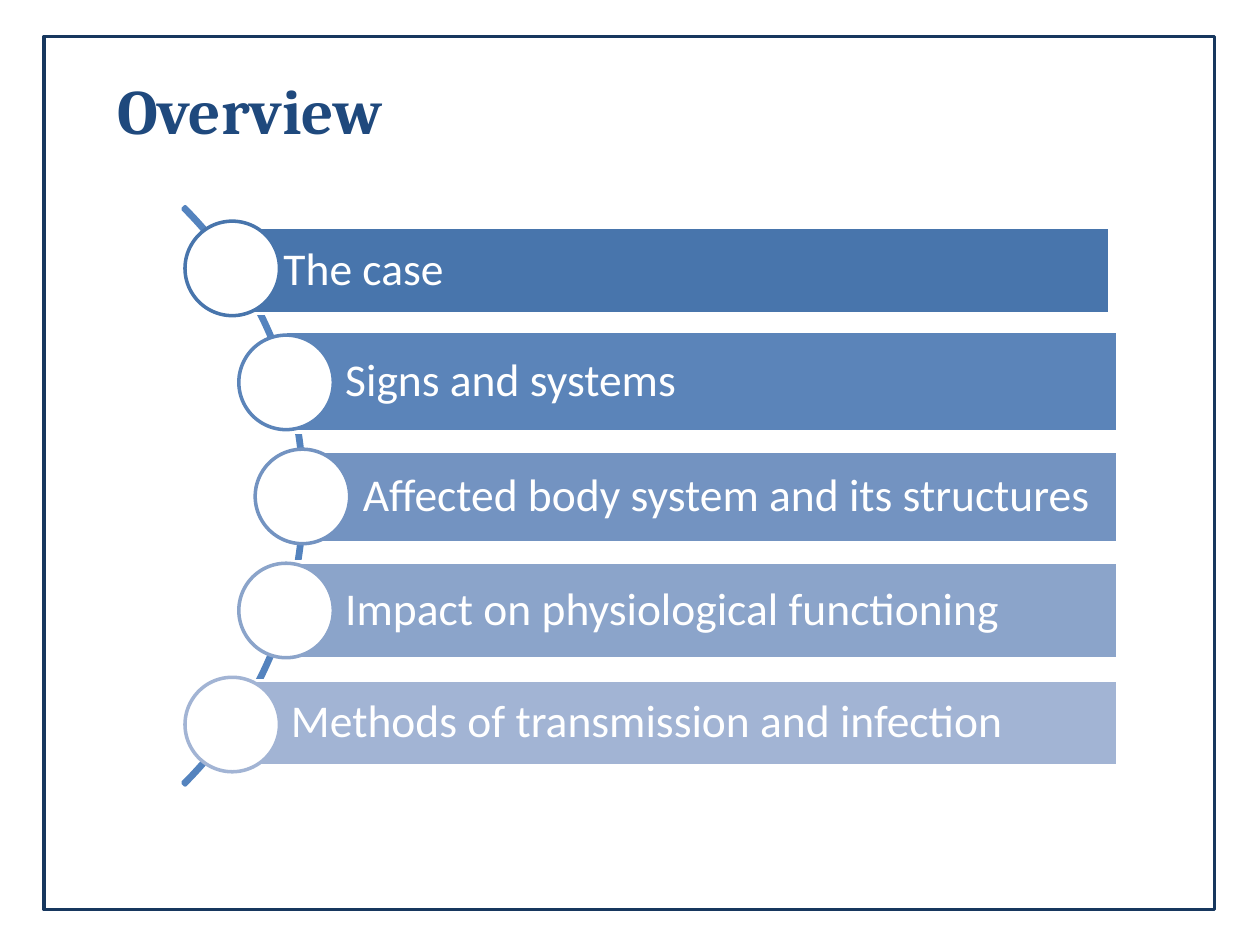
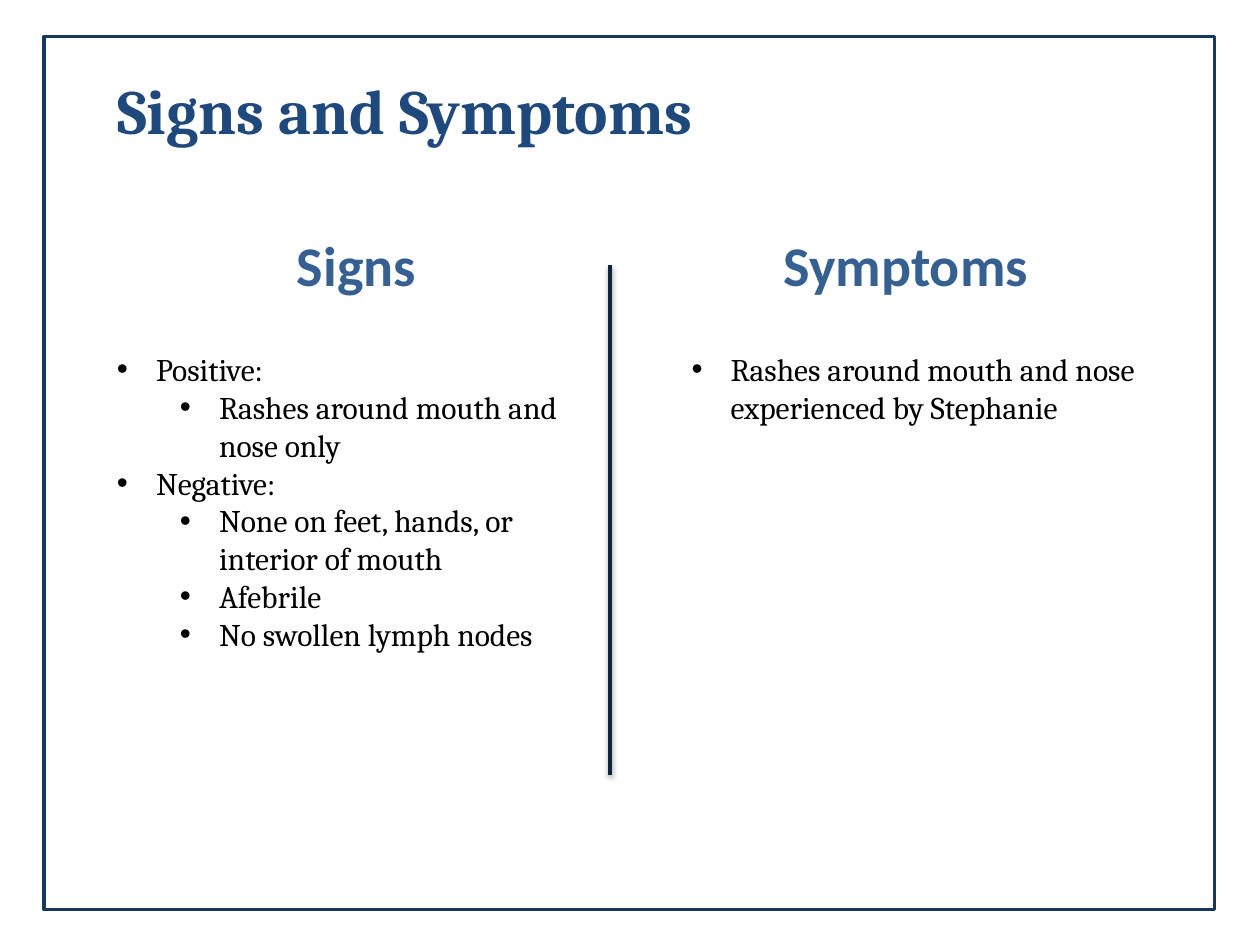
from dataclasses import dataclass
from math import sqrt

from lxml import etree
from pptx import Presentation
from pptx.dml.color import RGBColor
from pptx.enum.shapes import MSO_CONNECTOR, MSO_SHAPE
from pptx.enum.text import MSO_ANCHOR, MSO_AUTO_SIZE, PP_ALIGN
from pptx.oxml.ns import qn
from pptx.shapes.autoshape import Shape
from pptx.slide import Slide
from pptx.text.text import TextFrame
from pptx.util import Inches, Pt

RECT, OVAL, ARC = MSO_SHAPE.RECTANGLE, MSO_SHAPE.OVAL, MSO_SHAPE.BLOCK_ARC
LINE = MSO_CONNECTOR.STRAIGHT
LEFT, CENTER = PP_ALIGN.LEFT, PP_ALIGN.CENTER
TOP, MIDDLE = MSO_ANCHOR.TOP, MSO_ANCHOR.MIDDLE
GROW, FIXED = MSO_AUTO_SIZE.SHAPE_TO_FIT_TEXT, MSO_AUTO_SIZE.NONE


@dataclass(frozen=True)
class Theme:
    white: str = "FFFFFF"
    black: str = "000000"
    frame: str = "17375E"
    title: str = "1F497D"
    head: str = "376092"
    arc: str = "5483BE"
    rule: str = "0F243E"
    serif: str = "Cambria"
    sans: str = "Calibri"
    title_size: int = 36
    head_size: int = 32
    bar_size: int = 26
    body_size: int = 18
    stroke: int = 2


@dataclass(frozen=True)
class Box:
    left: float
    top: float
    width: float
    height: float

    def place(self) -> tuple:
        return tuple(Inches(n) for n in (self.left, self.top, self.width, self.height))


@dataclass(frozen=True)
class Font:
    name: str
    size: int
    color: str
    bold: bool = False


@dataclass(frozen=True)
class Bar:
    text: str
    box: Box
    color: str


@dataclass(frozen=True)
class Item:
    text: str
    level: int = 0


@dataclass(frozen=True)
class Column:
    head: str
    head_left: float
    body: Box
    items: tuple


THEME = Theme()
TITLE = Font(THEME.serif, THEME.title_size, THEME.title, True)
HEAD = Font(THEME.sans, THEME.head_size, THEME.head, True)
LABEL = Font(THEME.sans, THEME.bar_size, THEME.white)
BODY = Font(THEME.serif, THEME.body_size, THEME.black)

FRAME = Box(0.35, 0.29, 9.29, 6.93)
ARC_BOX = Box(-4.07, 0.69, 6.49, 6.49)
ARC_SHAPE = (189, 27, 0.004)
MID_X, MID_Y, RADIUS = -0.82, 3.94, 3.22
DOT, STEP = 0.75, 0.905

BARS = (
    Bar("The case", Box(1.77, 1.8, 7.04, 0.69), "4875AC"),
    Bar("Signs and systems", Box(2.26, 2.63, 6.61, 0.8), "5B84B9"),
    Bar("Affected body system and its structures", Box(2.4, 3.58, 6.47, 0.73), "7393C1"),
    Bar("Impact on physiological functioning", Box(2.26, 4.46, 6.61, 0.77), "8BA4CA"),
    Bar("Methods of transmission and infection", Box(1.83, 5.4, 7.04, 0.68), "A2B4D4"),
)

COLUMNS = (
    Column("Signs", 0.98, Box(0.83, 2.73, 3.78, 2.52), (
        Item("Positive:"),
        Item("Rashes around mouth and nose only", 1),
        Item("Negative:"),
        Item("None on feet, hands, or interior of mouth", 1),
        Item("Afebrile", 1),
        Item("No swollen lymph nodes", 1),
    )),
    Column("Symptoms ", 5.39, Box(5.39, 2.73, 3.78, 1.31), (
        Item("Rashes around mouth and nose experienced by Stephanie"),
    )),
)


def rgb(color: str) -> RGBColor:
    return RGBColor.from_string(color)


def add_run(para, text: str, font: Font) -> None:
    run = para.add_run()
    run.text = text
    run.font.name = font.name
    run.font.size = Pt(font.size)
    run.font.bold = font.bold
    run.font.color.rgb = rgb(font.color)


def set_frame(frame: TextFrame, anchor=TOP, fit=GROW) -> None:
    frame.word_wrap = True
    frame.auto_size = fit
    frame.vertical_anchor = anchor


def add_shape(slide: Slide, kind, box: Box, line: str, fill: str = "") -> Shape:
    shape = slide.shapes.add_shape(kind, *box.place())
    shape.shadow.inherit = False
    if fill:
        shape.fill.solid()
        shape.fill.fore_color.rgb = rgb(fill)
    else:
        shape.fill.background()
    shape.line.color.rgb = rgb(line)
    shape.line.width = Pt(THEME.stroke)
    return shape


def add_text(slide: Slide, box: Box) -> TextFrame:
    frame = slide.shapes.add_textbox(*box.place()).text_frame
    set_frame(frame)
    return frame


def add_slide(deck, text: str, width: float) -> Slide:
    slide = deck.slides.add_slide(deck.slide_layouts[5])
    add_shape(slide, RECT, FRAME, THEME.frame)
    title = slide.shapes.title
    title.left, title.top, title.width, title.height = Box(0.83, 0.52, width, 0.71).place()
    set_frame(title.text_frame)
    para = title.text_frame.paragraphs[0]
    para.alignment = LEFT
    add_run(para, text, TITLE)
    return slide


def add_bar(slide: Slide, bar: Bar, row: int) -> None:
    shape = add_shape(slide, RECT, bar.box, THEME.white, bar.color)
    frame = shape.text_frame
    set_frame(frame, MIDDLE, FIXED)
    frame.margin_left = Inches(0.48)
    frame.margin_top = frame.margin_right = frame.margin_bottom = Inches(0.07)
    para = frame.paragraphs[0]
    para.alignment = LEFT
    para.line_spacing = 0.9
    add_run(para, bar.text, LABEL)
    drop = (row - len(BARS) // 2) * STEP
    reach = sqrt(RADIUS ** 2 - drop ** 2)
    dot = Box(MID_X + reach - DOT / 2, MID_Y + drop - DOT / 2, DOT, DOT)
    add_shape(slide, OVAL, dot, bar.color, THEME.white)


def add_item(para, item: Item) -> None:
    para.level = item.level
    props = para._p.get_or_add_pPr()
    props.set("marL", str(Inches(0.31 + 0.5 * item.level)))
    props.set("indent", str(Inches(-0.31)))
    etree.SubElement(props, qn("a:buFont"), typeface="Arial")
    etree.SubElement(props, qn("a:buChar"), char="•")
    add_run(para, item.text, BODY)


def add_column(slide: Slide, col: Column) -> None:
    head = add_text(slide, Box(col.head_left, 1.78, 3.7, 0.64)).paragraphs[0]
    head.alignment = CENTER
    add_run(head, col.head, HEAD)
    frame = add_text(slide, col.body)
    for row, item in enumerate(col.items):
        add_item(frame.add_paragraph() if row else frame.paragraphs[0], item)


def add_rule(slide: Slide) -> None:
    ends = (Inches(n) for n in (4.84, 2.1, 4.84, 6.15))
    rule = slide.shapes.add_connector(LINE, *ends)
    rule.line.color.rgb = rgb(THEME.rule)
    rule.line.width = Pt(THEME.stroke)
    glow = etree.SubElement(rule._element.spPr, qn("a:effectLst"))
    shade = etree.SubElement(glow, qn("a:outerShdw"), blurRad=str(Pt(3.1)),
                             dist=str(Pt(1.6)), dir="5400000", rotWithShape="0")
    tint = etree.SubElement(shade, qn("a:srgbClr"), val=THEME.black)
    etree.SubElement(tint, qn("a:alpha"), val="38000")


def main() -> None:
    deck = Presentation()
    deck.slide_width, deck.slide_height = Inches(10), Inches(7.5)

    slide = add_slide(deck, "Overview", 4.57)
    arc = add_shape(slide, ARC, ARC_BOX, THEME.arc)
    for spot, value in enumerate(ARC_SHAPE):
        arc.adjustments[spot] = value
    for row, bar in enumerate(BARS):
        add_bar(slide, bar, row)

    slide = add_slide(deck, "Signs and Symptoms", 5.83)
    for col in COLUMNS:
        add_column(slide, col)
    add_rule(slide)

    deck.save("out.pptx")


if __name__ == "__main__":
    main()
